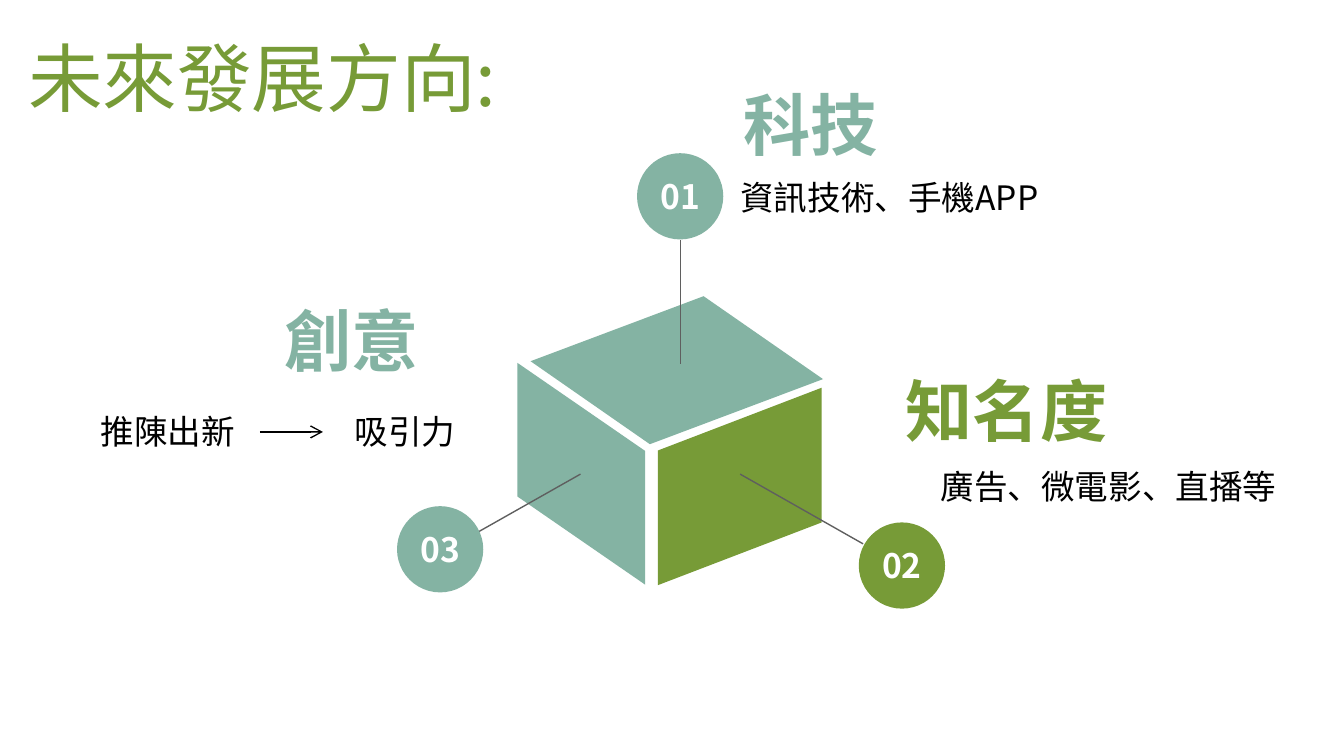
from pptx import Presentation
from pptx.dml.color import RGBColor
from pptx.enum.shapes import MSO_CONNECTOR, MSO_SHAPE
from pptx.enum.text import MSO_ANCHOR, PP_ALIGN
from pptx.oxml.ns import qn
from pptx.util import Pt
from lxml.etree import SubElement

THEME = {
    "font": "Noto Sans CJK SC",
    "teal": "84B3A3", "green": "779B37", "grey": "5F5F5F",
    "black": "000000", "white": "FFFFFF",
    "title": 40, "heading": 36, "body": 18,
    "line": 0.75,
}

# All lengths are in points; boxes are left, top, width, height.
TITLE = ("未來發展方向:", (7.9, 13.7, 265.7, 55.4))
CUBE_FACES = [  # box before rotation, rotation, flip attribute, slant, colour
    ((290.9, 166.3, 143.3, 64.1), 339.4, "flipV", 0.69, "teal"),
    ((252, 219.6, 118.8, 68.4), 90, None, 0.69, "teal"),
    ((343.4, 216.7, 105.8, 87.8), 90, "flipH", 0.383, "green"),
]
BADGE_SIZE = 46.2
BADGES = [  # label, left and top, pointer start, pointer end, colour
    ("01", (341.3, 82.1), (364.4, 195), (364.4, 128.6), "teal"),
    ("02", (460.1, 279.9), (396.5, 254), (462.4, 291.4), "green"),
    ("03", (212.7, 271.2), (311, 254), (255.8, 285.2), "teal"),
]
HEADINGS = [
    ("科技", (391, 41, 124.6, 51.1), "teal"),
    ("知名度", (478.1, 194.4, 136.8, 51.1), "green"),
    ("創意", (145.4, 157, 94.3, 51.1), "teal"),
]
DETAILS = [
    ("資訊技術、手機APP", (389.5, 91.4, 213.8, 28.8)),
    ("廣告、微電影、直播等", (496.8, 246.2, 195.1, 28.8)),
    ("推陳出新", (46.8, 216.7, 92.2, 28.8)),
    ("吸引力", (182.9, 216.7, 69.1, 28.8)),
]
ARROW = ((139.2, 231.4), (173, 231.4))


def color(name):
    return RGBColor.from_string(THEME[name])


def points(values):
    return [Pt(value) for value in values]


def write(shape, text, size, color_name, bold=False):
    frame = shape.text_frame
    frame.text = text
    frame.word_wrap = False
    span = frame.paragraphs[0].runs[0]
    font = span.font
    font.size, font.bold, font.name = Pt(THEME[size]), bold, THEME["font"]
    font.color.rgb = color(color_name)
    east_asian = SubElement(span.font._element, qn("a:ea"))
    east_asian.set("typeface", THEME["font"])


def add_filled(slide, kind, box, color_name):
    shape = slide.shapes.add_shape(kind, *points(box))
    shape.shadow.inherit = False
    shape.fill.solid()
    shape.fill.fore_color.rgb = color(color_name)
    shape.line.fill.background()
    return shape


def add_face(slide, box, rotation, flip, slant, color_name):
    face = add_filled(slide, MSO_SHAPE.PARALLELOGRAM, box, color_name)
    face.rotation = rotation
    face.adjustments[0] = slant
    if flip:
        face._element.spPr.find(qn("a:xfrm")).set(flip, "1")


def add_line(slide, start, end, color_name, arrow=False):
    line = slide.shapes.add_connector(MSO_CONNECTOR.STRAIGHT, *points(start + end))
    line.line.color.rgb = color(color_name)
    line.line.width = Pt(THEME["line"])
    if arrow:
        SubElement(line.line._get_or_add_ln(), qn("a:tailEnd")).set("type", "arrow")
    SubElement(line._element.spPr, qn("a:effectLst"))


def add_badge(slide, label, corner, color_name):
    badge = add_filled(slide, MSO_SHAPE.OVAL, corner + (BADGE_SIZE, BADGE_SIZE), color_name)
    write(badge, label, "body", "white", bold=True)
    badge.text_frame.vertical_anchor = MSO_ANCHOR.MIDDLE
    badge.text_frame.paragraphs[0].alignment = PP_ALIGN.CENTER


def add_text(slide, text, box, size, color_name, bold=False):
    write(slide.shapes.add_textbox(*points(box)), text, size, color_name, bold)


def add_title(slide, text, box):
    title = slide.shapes.title
    title.left, title.top, title.width, title.height = points(box)
    write(title, text, "title", "green")
    title.text_frame.vertical_anchor = MSO_ANCHOR.TOP
    title.text_frame.paragraphs[0].alignment = PP_ALIGN.LEFT


def main():
    deck = Presentation()
    deck.slide_width, deck.slide_height = Pt(720), Pt(405)
    slide = deck.slides.add_slide(deck.slide_layouts[5])
    add_title(slide, *TITLE)
    for face in CUBE_FACES:
        add_face(slide, *face)
    for label, corner, start, end, color_name in BADGES:
        add_line(slide, start, end, "grey")
        add_badge(slide, label, corner, color_name)
    for text, box, color_name in HEADINGS:
        add_text(slide, text, box, "heading", color_name, bold=True)
    for text, box in DETAILS:
        add_text(slide, text, box, "body", "black")
    add_line(slide, *ARROW, "black", arrow=True)
    deck.save("out.pptx")


if __name__ == "__main__":
    main()
